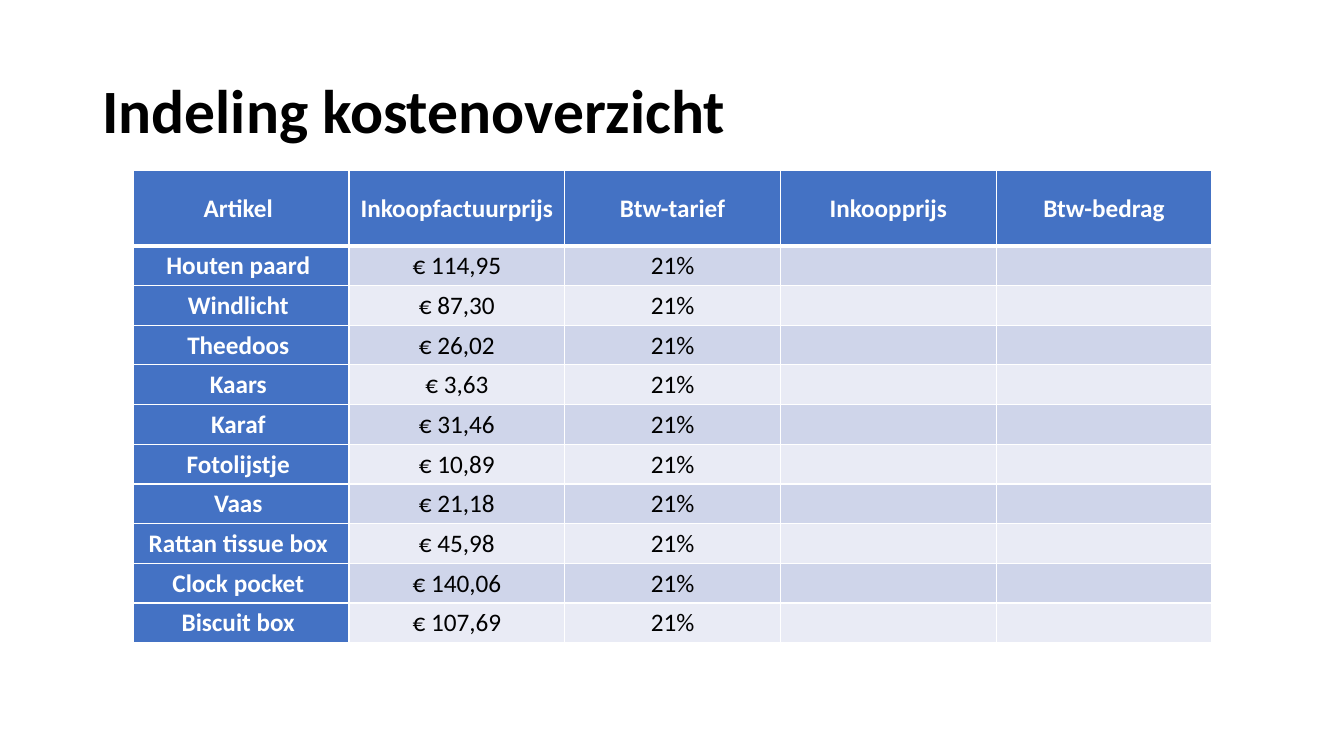
"""Build the slide with the cost overview table."""
from pptx import Presentation
from pptx.dml.color import RGBColor as Color
from pptx.enum.text import MSO_ANCHOR as Anchor, MSO_AUTO_SIZE as AutoSize, PP_ALIGN as Align
from pptx.oxml import parse_xml
from pptx.oxml.ns import nsdecls
from pptx.util import Pt

COLORS = {"text": "000000", "head": "4472C4", "light": "FFFFFF",
          "odd": "CFD5EA", "even": "E9EBF5"}
HEADINGS = ("Artikel ", "Inkoopfactuurprijs", "Btw-tarief", "Inkoopprijs", "Btw-bedrag")
PRICES = {
    "Houten paard ": "114,95",
    "Windlicht ": "87,30",
    "Theedoos ": "26,02",
    "Kaars ": "3,63",
    "Karaf ": "31,46",
    "Fotolijstje ": "10,89",
    "Vaas ": "21,18",
    "Rattan tissue box ": "45,98",
    "Clock pocket ": "140,06",
    "Biscuit box ": "107,69",
}
RATE = "21%"
COLUMN_WIDTH, HEAD_HEIGHT, ROW_HEIGHT = Pt(154.1), Pt(54), Pt(28.35)
CELL_FORMAT = {"vertical_anchor": Anchor.MIDDLE, "margin_left": Pt(0.7),
               "margin_right": Pt(0.7), "margin_top": Pt(0.7), "margin_bottom": 0}


def set_format(target, values):
    for name, value in values.items():
        setattr(target, name, value)


def write(para, text, size, color, bold):
    span = para.add_run()
    span.text = text
    set_format(span.font, {"name": "Calibri", "size": Pt(size), "bold": bold})
    span.font.color.rgb = Color.from_string(COLORS[color])


def add_title(page, text):
    box = page.shapes.title
    set_format(box, {"left": Pt(66), "top": Pt(28.75), "width": Pt(828), "height": Pt(104.4)})
    set_format(box.text_frame, {"vertical_anchor": Anchor.MIDDLE, "word_wrap": True,
                                "auto_size": AutoSize.NONE})
    para = box.text_frame.paragraphs[0]
    set_format(para, {"alignment": Align.LEFT, "line_spacing": 0.9})
    write(para, text, 44, "text", True)


def add_borders(cell, widths):
    properties = cell._tc.get_or_add_tcPr()
    for index, (side, width) in enumerate(widths.items()):
        properties.insert(index, parse_xml(
            f'<a:ln{side} {nsdecls("a")} w="{Pt(width)}"><a:solidFill>'
            f'<a:srgbClr val="{COLORS["light"]}"/></a:solidFill></a:ln{side}>'))


def fill_cell(cell, text, row, column):
    is_head = row == 0 or column == 0
    band = "odd" if row % 2 else "even"
    set_format(cell, CELL_FORMAT)
    cell.fill.solid()
    cell.fill.fore_color.rgb = Color.from_string(COLORS["head" if is_head else band])
    add_borders(cell, {"L": 1, "R": 1, "T": 3 if row == 1 else 1, "B": 1 if row else 3})
    para = cell.text_frame.paragraphs[0]
    para.alignment = Align.CENTER
    if text:
        write(para, text, 18, "light" if is_head else "text", is_head)


def add_cost_table(page):
    rows = [HEADINGS] + [(item, f"€ {price}", RATE, "", "") for item, price in PRICES.items()]
    table = page.shapes.add_table(
        len(rows), len(HEADINGS), Pt(95.2), Pt(121.6), COLUMN_WIDTH * len(HEADINGS),
        HEAD_HEIGHT + ROW_HEIGHT * len(PRICES)).table
    table.first_col = True
    for column in table.columns:
        column.width = COLUMN_WIDTH
    for row, texts in enumerate(rows):
        table.rows[row].height = ROW_HEIGHT if row else HEAD_HEIGHT
        for column, text in enumerate(texts):
            fill_cell(table.cell(row, column), text, row, column)


def main():
    deck = Presentation()
    set_format(deck, {"slide_width": Pt(960), "slide_height": Pt(540)})
    page = deck.slides.add_slide(deck.slide_layouts[5])
    add_title(page, "Indeling kostenoverzicht")
    add_cost_table(page)
    deck.save("out.pptx")


if __name__ == "__main__":
    main()
